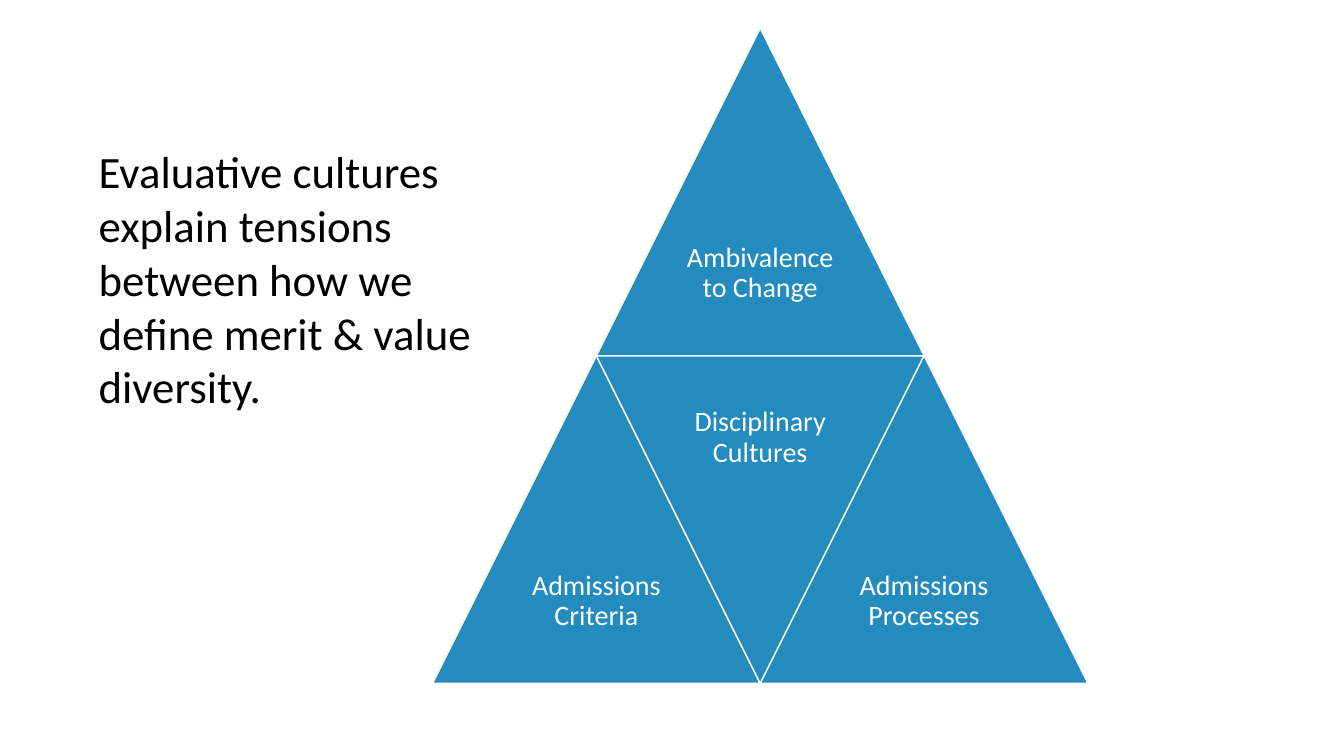
from pptx import Presentation
from pptx.dml.color import RGBColor
from pptx.enum.text import MSO_ANCHOR, MSO_AUTO_SIZE, PP_ALIGN
from pptx.util import Inches, Pt

MIDDLE = MSO_ANCHOR.MIDDLE
CENTER = PP_ALIGN.CENTER
GROW = MSO_AUTO_SIZE.SHAPE_TO_FIT_TEXT


def paint(target, color):
    target.rgb = RGBColor.from_string(color)


def write(frame, text, size, color):
    frame.word_wrap = True
    para = frame.paragraphs[0]
    para.text = text
    para.font.name = "Calibri"
    para.font.size = Pt(size)
    paint(para.font.color, color)
    return para


deck = Presentation()
deck.slide_width = Inches(13.33)
deck.slide_height = Inches(7.5)
slide = deck.slides.add_slide(deck.slide_layouts[6])

SIDE = 3.25
HALF = SIDE / 2
LEFT, TOP = 4.29, 0.28
WIDE, NARROW = 1.7, 0.08

parts = [
    ("Ambivalence to Change", 1, 0, True),
    ("Admissions Criteria", 0, 1, True),
    ("Disciplinary Cultures", 1, 1, False),
    ("Admissions Processes", 2, 1, True),
]

for text, step, row, upright in parts:
    x = LEFT + step * HALF
    y = TOP + row * SIDE
    base, tip = (y + SIDE, y) if upright else (y, y + SIDE)
    pen = slide.shapes.build_freeform(Inches(x), Inches(base))
    pen.add_line_segments(
        [(Inches(x + HALF), Inches(tip)), (Inches(x + SIDE), Inches(base))],
        close=True,
    )
    part = pen.convert_to_shape()
    part.shadow.inherit = False
    part.fill.solid()
    paint(part.fill.fore_color, "238BBE")
    part.line.width = Pt(1)
    paint(part.line.color, "FFFFFF")

    frame = part.text_frame
    frame.vertical_anchor = MIDDLE
    frame.margin_left = frame.margin_right = Inches(0.85)
    frame.margin_top = Inches(WIDE if upright else NARROW)
    frame.margin_bottom = Inches(NARROW if upright else WIDE)
    para = write(frame, text, 20, "FFFFFF")
    para.alignment = CENTER
    para.line_spacing = 0.9
    para.space_after = Pt(7)

claim = slide.shapes.add_textbox(Inches(0.88), Inches(1.38), Inches(4.21), Inches(2.79))
write(
    claim.text_frame,
    "Evaluative cultures explain tensions between how we define merit & value diversity.",
    32,
    "000000",
)
claim.text_frame.auto_size = GROW

deck.save("out.pptx")
